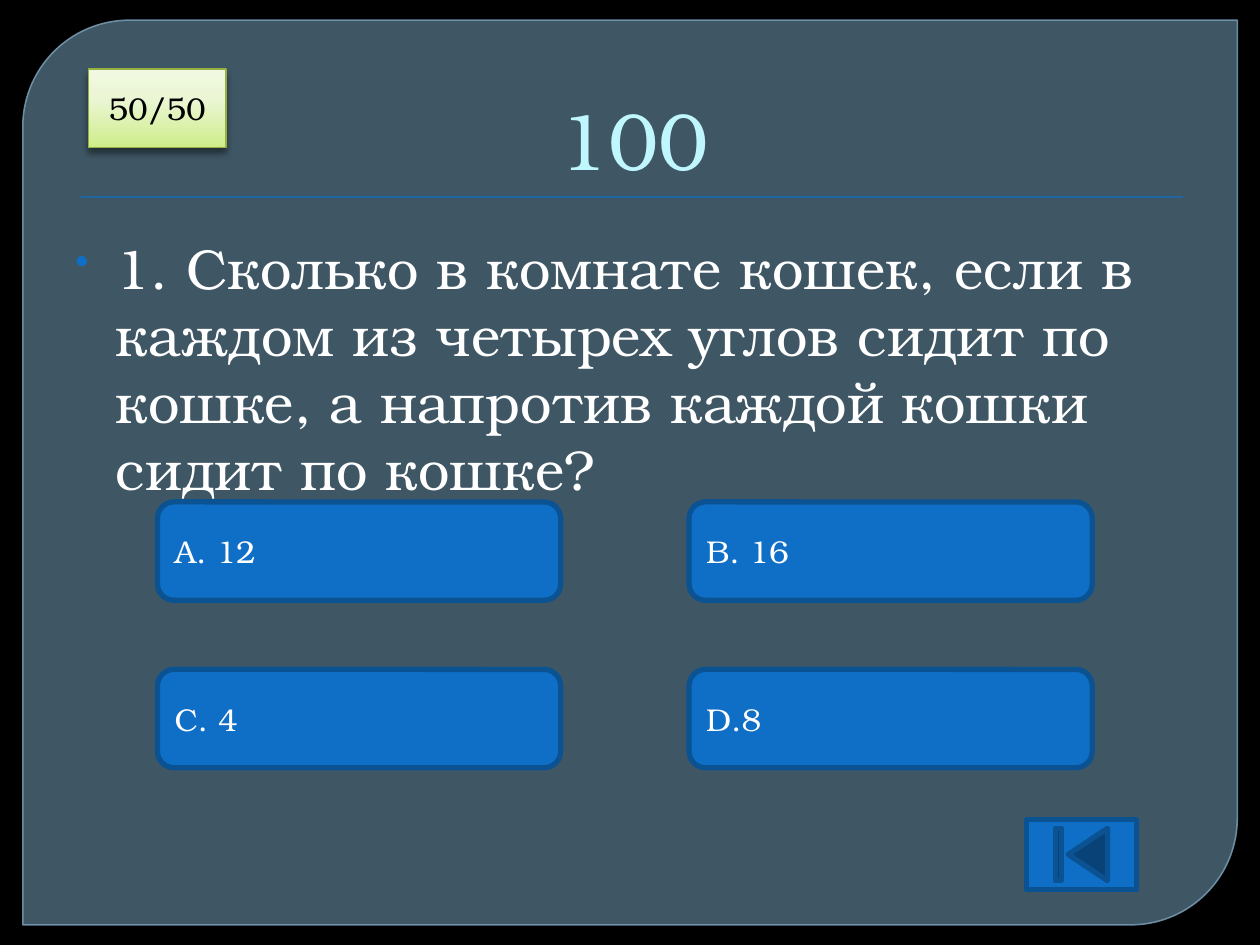
from copy import deepcopy

from lxml import etree
from pptx import Presentation
from pptx.dml.color import RGBColor
from pptx.enum.shapes import MSO_SHAPE
from pptx.enum.text import MSO_ANCHOR, PP_ALIGN
from pptx.oxml.ns import qn
from pptx.util import Pt

FONT = "TeX Gyre Bonum"
COLORS = {
    "black": "000000",
    "white": "FFFFFF",
    "panel": "61869C",
    "panel edge": "779BB2",
    "blue": "0F6FC6",
    "dark blue": "0B5292",
    "title": "C0F7FF",
    "hint edge": "96B042",
}
HINT_STOPS = [(0, "CEED89"), (0.62, "EBF6D5"), (1, "F1F8E1")]
ANSWERS = [["A. 12", "B. 16"], ["C. 4", "D.8"]]
LEFT, CENTER = PP_ALIGN.LEFT, PP_ALIGN.CENTER
TOP, MIDDLE, BOTTOM = MSO_ANCHOR.TOP, MSO_ANCHOR.MIDDLE, MSO_ANCHOR.BOTTOM
PANEL, BAR, ROUNDED = MSO_SHAPE.ROUND_2_DIAG_RECTANGLE, MSO_SHAPE.RECTANGLE, MSO_SHAPE.ROUNDED_RECTANGLE
HINT, BACK = MSO_SHAPE.ACTION_BUTTON_CUSTOM, MSO_SHAPE.ACTION_BUTTON_BEGINNING


def rgb(name):
    """Return the named colour."""
    return RGBColor.from_string(COLORS[name])


def set_alpha(fill, percent):
    """Make a solid fill partly transparent."""
    color = fill._xPr.find(qn("a:solidFill"))[0]
    etree.SubElement(color, qn("a:alpha"), val=str(percent * 1000))


def add_shape(slide, kind, place, fill, line=None, width=3):
    """Add a preset shape with a solid fill and an optional outline."""
    shape = slide.shapes.add_shape(kind, *map(Pt, place))
    shape.shadow.inherit = False
    shape.fill.solid()
    shape.fill.fore_color.rgb = rgb(fill)
    if line:
        shape.line.color.rgb = rgb(line)
        shape.line.width = Pt(width)
    else:
        shape.line.fill.background()
    return shape


def add_shadow(shape, percent, blur, distance):
    """Cast a black shadow straight down."""
    effects = shape._element.spPr.find(qn("a:effectLst"))
    shadow = etree.SubElement(effects, qn("a:outerShdw"), blurRad=str(Pt(blur)),
                              dist=str(Pt(distance)), dir="5400000", rotWithShape="0")
    color = etree.SubElement(shadow, qn("a:srgbClr"), val=COLORS["black"])
    etree.SubElement(color, qn("a:alpha"), val=str(percent * 1000))


def set_gradient(shape, stops):
    """Fill a shape with a gradient that rises from the bottom."""
    shape.fill.gradient()
    shape.fill.gradient_angle = 90
    stop_list = shape._element.spPr.find(qn("a:gradFill")).find(qn("a:gsLst"))
    while len(stop_list) < len(stops):
        stop_list.append(deepcopy(stop_list[-1]))
    for stop, (position, color) in zip(shape.fill.gradient_stops, stops):
        stop.position = position
        stop.color.rgb = RGBColor.from_string(color)


def write(shape, text, size, color, align=LEFT, anchor=MIDDLE):
    """Write one paragraph into a shape and return it."""
    frame = shape.text_frame
    frame.word_wrap = True
    frame.vertical_anchor = anchor
    para = frame.paragraphs[0]
    para.alignment = align
    span = para.add_run()
    span.text = text
    span.font.name = FONT
    span.font.size = Pt(size)
    span.font.color.rgb = rgb(color)
    return para


def add_text(slide, place, *style):
    """Add a wrapped text box with one paragraph."""
    box = slide.shapes.add_textbox(*map(Pt, place))
    return write(box, *style)


def set_indent(para, margin, indent=0):
    """Set the left margin and the first-line indent."""
    properties = para._p.get_or_add_pPr()
    properties.set("marL", str(Pt(margin)))
    properties.set("indent", str(Pt(indent)))


def add_bullet(para, color, percent):
    """Put a coloured bullet before a paragraph."""
    properties = para._p.get_or_add_pPr()
    bullet_color = etree.SubElement(properties, qn("a:buClr"))
    etree.SubElement(bullet_color, qn("a:srgbClr"), val=COLORS[color])
    etree.SubElement(properties, qn("a:buSzPct"), val=str(percent * 1000))
    etree.SubElement(properties, qn("a:buChar"), char="•")


def add_frame(slide):
    """Draw the background, the panel and the rule under the title."""
    slide.background.fill.solid()
    slide.background.fill.fore_color.rgb = rgb("black")
    panel = add_shape(slide, PANEL, (13, 11.5, 694, 517), "panel", "panel edge", 0.87)
    panel.adjustments[0] = 0.118
    panel.adjustments[1] = 0
    set_alpha(panel.fill, 65)
    set_alpha(panel.line.fill, 88)
    rule = add_shape(slide, BAR, (46, 112.2, 630, 0.75), "blue")
    add_shadow(rule, 75, 1, 1)


def add_question(slide):
    """Write the score and the question."""
    title = add_text(slide, (36, 20, 648, 90), "100", 46, "title", CENTER, BOTTOM)
    set_indent(title, 4.3)
    question = add_text(
        slide, (36, 129.6, 648, 356.4),
        "1. Сколько в комнате кошек, если в каждом из четырех углов сидит по кошке, "
        "а напротив каждой кошки сидит по кошке?", 32, "white", LEFT, TOP)
    set_indent(question, 23, -23)
    add_bullet(question, "blue", 70)


def add_answers(slide):
    """Lay the answer buttons out in a grid."""
    for row, answers in enumerate(ANSWERS):
        for column, answer in enumerate(answers):
            place = (90 + column * 303.8, 286.8 + row * 95.7, 230.4, 56.2)
            button = add_shape(slide, ROUNDED, place, "blue", "dark blue")
            write(button, answer, 18, "white")


def add_controls(slide):
    """Add the hint button and the back button."""
    hint = add_shape(slide, HINT, (50.4, 39.4, 78.8, 45), "white", "hint edge", 0.75)
    set_gradient(hint, HINT_STOPS)
    add_shadow(hint, 43, 4, 3)
    write(hint, "50/50", 18, "black", CENTER)
    add_shape(slide, BACK, (586.5, 468.4, 62.8, 39.8), "blue", "dark blue")


def main():
    """Build the quiz slide and save it."""
    deck = Presentation()
    deck.slide_width, deck.slide_height = Pt(720), Pt(540)
    slide = deck.slides.add_slide(deck.slide_layouts[6])
    add_frame(slide)
    add_question(slide)
    add_answers(slide)
    add_controls(slide)
    deck.save("out.pptx")


if __name__ == "__main__":
    main()
